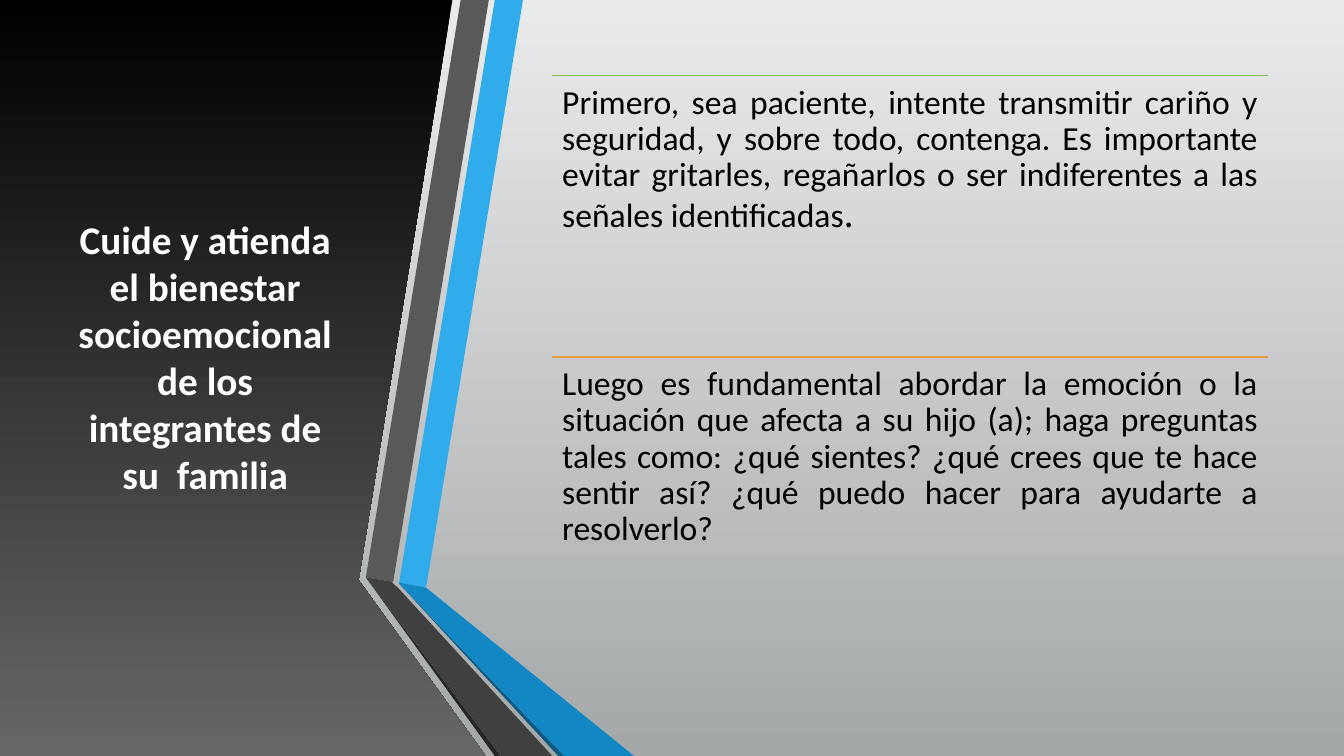
from lxml import etree
from pptx import Presentation
from pptx.dml import color
from pptx.enum import shapes, text
from pptx.oxml import ns
from pptx.util import Cm, Pt

WIDTH, HEIGHT = 33.87, 19.05
BACKDROP = ("E9EAEB", "A5A8A9")
PANEL = [(0, 0), (11.4, 0), (9.04, 14.62), (12.24, HEIGHT), (0, HEIGHT)]
RIBBONS = [
    ("30ACEC", [(10.06, 14.68), (10.74, 14.81), (13.18, 0), (12.47, 0)]),
    ("595959", [(12.32, 0), (11.61, 0), (9.22, 14.55), (9.91, 14.66)]),
    ("262626", [(9.22, 14.55), (12.47, HEIGHT), (12.62, HEIGHT)]),
    ("0C5A82", [(10.06, 14.71), (14.07, HEIGHT), (14.22, HEIGHT)]),
    ("1287C3", [(10.06, 14.71), (14.22, HEIGHT), (15.98, HEIGHT),
                (10.74, 14.81), (10.06, 14.68)]),
    ("404040", [(13.92, HEIGHT), (10.03, 14.81), (9.88, 14.68),
                (9.91, 14.66), (9.22, 14.55), (12.62, HEIGHT)]),
]
TITLE = ("Cuide y atienda el bienestar socioemocional de los "
         "integrantes de su  familia")
ADVICE = [
    ("80C34F", [
        ("Primero, sea paciente, intente transmitir cariño y seguridad, y sobre "
         "todo, contenga. Es importante evitar gritarles, regañarlos o ser "
         "indiferentes a las señales identificadas", 24),
        (". ", 28)]),
    ("E29D3E", [
        ("Luego es fundamental abordar la emoción o la situación que afecta a su "
         "hijo (a); haga preguntas tales como: ¿qué sientes? ¿qué crees que te "
         "hace sentir así? ¿qué puedo hacer para ayudarte a resolverlo?", 24)]),
]
ADVICE_LEFT, ADVICE_TOP, ADVICE_WIDTH, ADVICE_HEIGHT = 13.92, 1.9, 18.03, 7.09


def rgb(code):
    return color.RGBColor.from_string(code)


def shade_down(fill, top, bottom):
    fill.gradient()
    fill.gradient_angle = 270
    for stop, code, place in zip(fill.gradient_stops, (top, bottom), (0, 1)):
        stop.color.rgb = rgb(code)
        stop.position = place


def add_backdrop(slide):
    shade_down(slide.background.fill, *BACKDROP)
    sheet = slide.shapes.add_shape(
        shapes.MSO_SHAPE.RECTANGLE, 0, 0, Cm(WIDTH), Cm(HEIGHT))
    sheet.shadow.inherit = False
    sheet.line.fill.background()
    shade_down(sheet.fill, *BACKDROP)


def add_outline(slide, corners):
    points = [(Cm(x), Cm(y)) for x, y in corners]
    builder = slide.shapes.build_freeform(*points[0])
    builder.add_line_segments(points[1:], close=True)
    outline = builder.convert_to_shape()
    outline.shadow.inherit = False
    outline.line.fill.background()
    return outline


def add_ribbon(slide, code, corners):
    ribbon = add_outline(slide, corners)
    ribbon.fill.solid()
    ribbon.fill.fore_color.rgb = rgb(code)


def add_rule(slide, left, top, width, code):
    rule = slide.shapes.add_connector(
        shapes.MSO_CONNECTOR.STRAIGHT, Cm(left), Cm(top), Cm(left + width), Cm(top))
    rule.line.color.rgb = rgb(code)
    rule.line.width = Pt(1.25)
    etree.SubElement(rule._element.spPr, ns.qn("a:effectLst"))


def add_text(slide, box, pieces, code, align):
    frame = slide.shapes.add_textbox(*map(Cm, box)).text_frame
    frame.word_wrap = True
    paragraph = frame.paragraphs[0]
    paragraph.alignment = align
    paragraph.font.name = "Calibri"
    paragraph.font.color.rgb = rgb(code)
    for words, size in pieces:
        run = paragraph.add_run()
        run.text = words
        run.font.size = Pt(size)
    return frame


def add_title(slide):
    frame = add_text(slide, (1.5, 1.9, 7.34, 14.17), [(TITLE, 28)],
                     "FFFFFF", text.PP_ALIGN.CENTER)
    frame.vertical_anchor = text.MSO_ANCHOR.MIDDLE
    frame.paragraphs[0].font.bold = True


def add_advice(slide, top, code, pieces):
    add_rule(slide, ADVICE_LEFT, top, ADVICE_WIDTH, code)
    frame = add_text(slide, (ADVICE_LEFT, top, ADVICE_WIDTH, ADVICE_HEIGHT),
                     pieces, "000000", text.PP_ALIGN.JUSTIFY)
    frame.margin_top = frame.margin_bottom = Cm(0.25)
    frame.paragraphs[0].line_spacing = 0.9


def main():
    deck = Presentation()
    deck.slide_width, deck.slide_height = Cm(WIDTH), Cm(HEIGHT)
    slide = deck.slides.add_slide(deck.slide_layouts[6])
    add_backdrop(slide)
    shade_down(add_outline(slide, PANEL).fill, "000000", "676767")
    add_title(slide)
    for code, corners in RIBBONS:
        add_ribbon(slide, code, corners)
    for row, (code, pieces) in enumerate(ADVICE):
        add_advice(slide, ADVICE_TOP + row * ADVICE_HEIGHT, code, pieces)
    deck.save("out.pptx")


if __name__ == "__main__":
    main()
